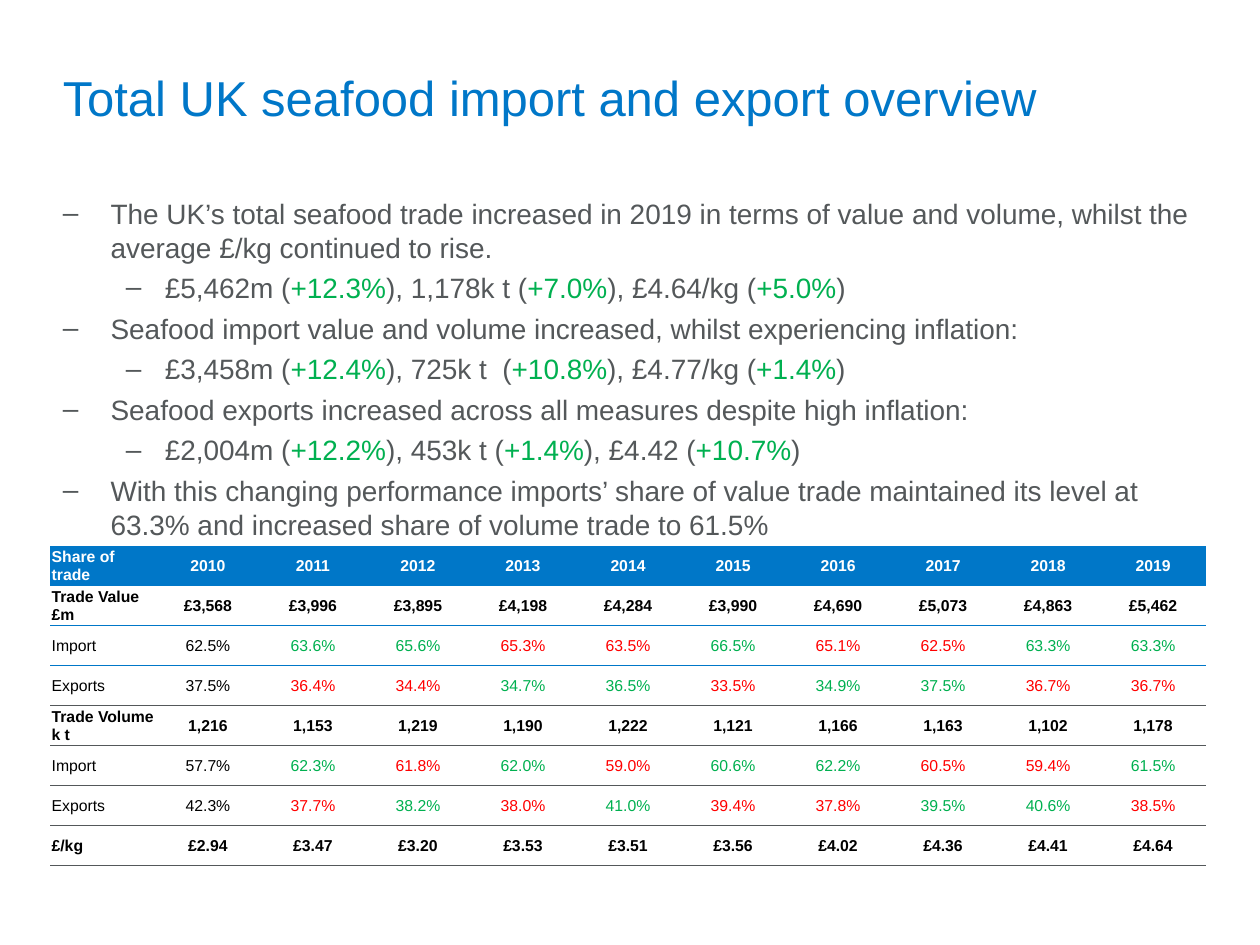
from lxml.etree import SubElement
from pptx import Presentation
from pptx.dml.color import RGBColor
from pptx.enum.text import MSO_ANCHOR, PP_ALIGN
from pptx.oxml.ns import qn
from pptx.util import Inches, Pt

BLUE = RGBColor(0x00, 0x77, 0xC8)
GREY = RGBColor(0x54, 0x58, 0x5A)
GREEN = RGBColor(0x00, 0xB0, 0x50)
RED = RGBColor(0xFF, 0x00, 0x00)
BLACK = RGBColor(0x00, 0x00, 0x00)
WHITE = RGBColor(0xFF, 0xFF, 0xFF)
PLAIN_TABLE_STYLE = "{2D5ABB26-0587-4C30-8999-92F81FD0307C}"


def set_font(font, size, color, bold=False):
    font.name = "Arial"
    font.size = Pt(size)
    font.color.rgb = color
    font.bold = bold


def add_bottom_border(cell, color, width):
    line = SubElement(cell._tc.get_or_add_tcPr(), qn("a:lnB"), w=str(Pt(width)))
    fill = SubElement(line, qn("a:solidFill"))
    SubElement(fill, qn("a:srgbClr"), val=str(color))


prs = Presentation()
prs.slide_width = Inches(10)
prs.slide_height = Inches(7.5)
slide = prs.slides.add_slide(prs.slide_layouts[6])

title = slide.shapes.add_textbox(Inches(0.4), Inches(0.3), Inches(9.17), Inches(0.94)).text_frame
title.word_wrap = True
title.vertical_anchor = MSO_ANCHOR.MIDDLE
title.text = "Total UK seafood import and export overview"
set_font(title.paragraphs[0].font, 28, BLUE)

findings = [
    (0, "The UK’s total seafood trade increased in 2019 in terms of value and volume, "
        "whilst the average £/kg continued to rise."),
    (1, "£5,462m (|+12.3%|), 1,178k t (|+7.0%|), £4.64/kg (|+5.0%|)"),
    (0, "Seafood import value and volume increased, whilst experiencing inflation:"),
    (1, "£3,458m (|+12.4%|), 725k t  (|+10.8%|), £4.77/kg (|+1.4%|)"),
    (0, "Seafood exports increased across all measures despite high inflation:"),
    (1, "£2,004m (|+12.2%|), 453k t (|+1.4%|), £4.42 (|+10.7%|)"),
    (0, "With this changing performance imports’ share of value trade maintained its level "
        "at 63.3% and increased share of volume trade to 61.5%"),
]
indents = [(0.38, -0.38), (0.81, -0.31)]

body = slide.shapes.add_textbox(Inches(0.4), Inches(1.51), Inches(9.17), Inches(3.41)).text_frame
body.word_wrap = True
for i, (level, finding) in enumerate(findings):
    paragraph = body.add_paragraph() if i else body.paragraphs[0]
    paragraph.level = level
    if i:
        paragraph.space_before = Pt(4)
    margin, hanging = indents[level]
    properties = paragraph._p.get_or_add_pPr()
    properties.set("marL", str(Inches(margin)))
    properties.set("indent", str(Inches(hanging)))
    SubElement(properties, qn("a:buFont"), typeface="Arial")
    SubElement(properties, qn("a:buChar"), char="–")
    set_font(paragraph.font, 16, GREY)
    for part, text in enumerate(finding.split("|")):
        run = paragraph.add_run()
        run.text = text
        if part % 2:
            run.font.color.rgb = GREEN

trade_rows = [
    ("Share of trade", "2010 2011 2012 2013 2014 2015 2016 2017 2018 2019"),
    ("Trade Value £m", "£3,568 £3,996 £3,895 £4,198 £4,284 £3,990 £4,690 £5,073 £4,863 £5,462"),
    ("Import", "62.5% 63.6% 65.6% 65.3% 63.5% 66.5% 65.1% 62.5% 63.3% 63.3%"),
    ("Exports", "37.5% 36.4% 34.4% 34.7% 36.5% 33.5% 34.9% 37.5% 36.7% 36.7%"),
    ("Trade Volume k t", "1,216 1,153 1,219 1,190 1,222 1,121 1,166 1,163 1,102 1,178"),
    ("Import", "57.7% 62.3% 61.8% 62.0% 59.0% 60.6% 62.2% 60.5% 59.4% 61.5%"),
    ("Exports", "42.3% 37.7% 38.2% 38.0% 41.0% 39.4% 37.8% 39.5% 40.6% 38.5%"),
    ("£/kg", "£2.94 £3.47 £3.20 £3.53 £3.51 £3.56 £4.02 £4.36 £4.41 £4.64"),
]

trade = slide.shapes.add_table(
    len(trade_rows), 11, Inches(0.4), Inches(4.33), Inches(9.17), Inches(2.54)).table
trade.horz_banding = False
trade._tbl.tblPr.find(qn("a:tableStyleId")).text = PLAIN_TABLE_STYLE

for r, (label, figures) in enumerate(trade_rows):
    is_share = label in ("Import", "Exports")
    color = BLACK if r else WHITE
    previous = None
    for c, text in enumerate([label] + figures.split()):
        if is_share and c:
            share = float(text.rstrip("%"))
            if previous is not None and share != previous:
                color = GREEN if share > previous else RED
            previous = share
        cell = trade.cell(r, c)
        cell.margin_left = cell.margin_right = cell.margin_top = Inches(0.01)
        cell.margin_bottom = 0
        cell.vertical_anchor = MSO_ANCHOR.MIDDLE
        cell.text = text
        paragraph = cell.text_frame.paragraphs[0]
        paragraph.alignment = PP_ALIGN.CENTER if c else PP_ALIGN.LEFT
        set_font(paragraph.font, 9, color, not is_share)
        if r < 3:
            if r != 0:
                add_bottom_border(cell, BLUE, 1)
        else:
            add_bottom_border(cell, GREY, 0.5)
        if r == 0:
            cell.fill.solid()
            cell.fill.fore_color.rgb = BLUE
        else:
            cell.fill.background()

prs.save("out.pptx")
